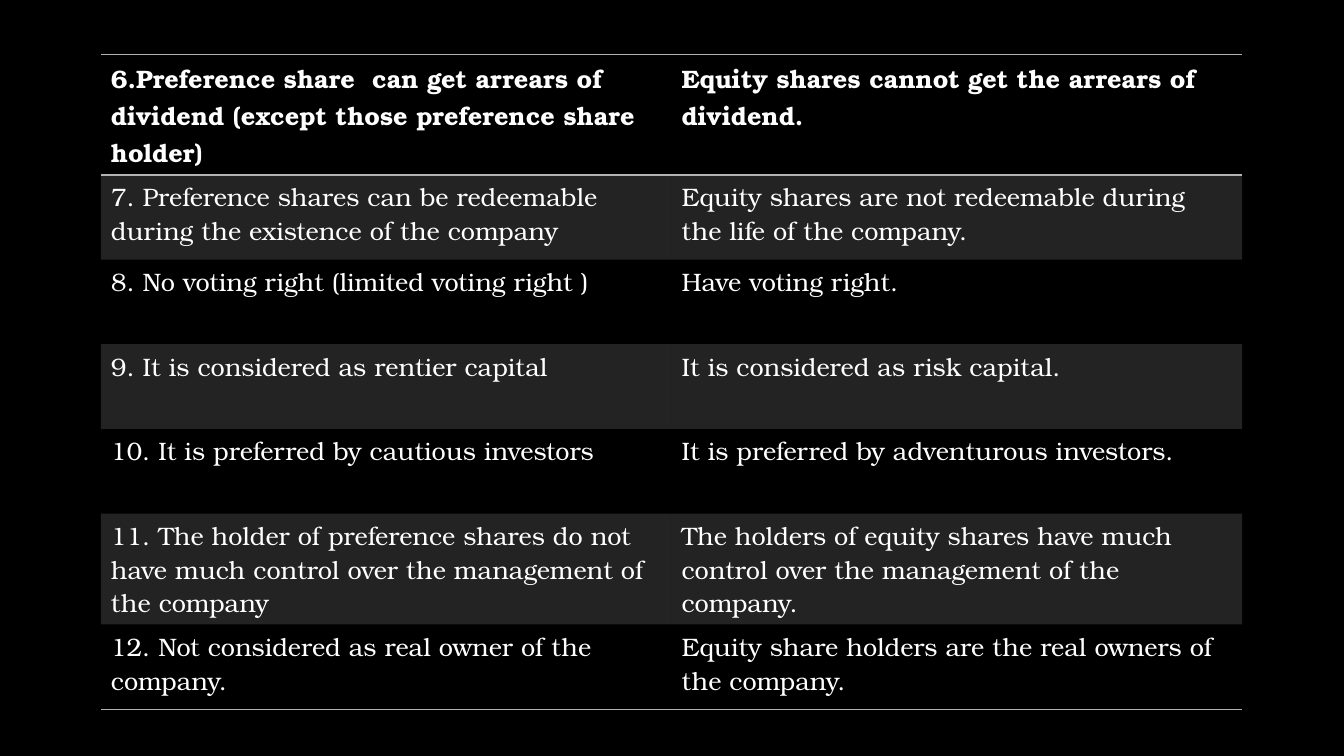
from lxml.etree import SubElement
from pptx import Presentation
from pptx.dml.color import RGBColor
from pptx.oxml.ns import qn
from pptx.util import Inches, Pt

COLORS = {"background": "000000", "text": "FFFFFF", "accent": "B2B2B2"}

COMPARISON = [
    ("6.Preference share  can get arrears of dividend (except those preference share holder)",
     "Equity shares cannot get the arrears of dividend."),
    ("7. Preference shares can be redeemable during the existence of the company",
     "Equity shares are not redeemable during the life of the company."),
    ("8. No voting right (limited voting right )", "Have voting right."),
    ("9. It is considered as rentier capital", "It is considered as risk capital."),
    ("10. It is preferred by cautious investors", "It is preferred by adventurous investors."),
    ("11. The holder of preference shares do not have much control over the management of the company",
     "The holders of equity shares have much control over the management of the company."),
    ("12. Not considered as real owner of the company.",
     "Equity share holders are the real owners of the company."),
]
ROW_HEIGHTS = [1.07, 0.84, 0.84, 0.84, 0.84, 1.07, 0.84]


def write(frame, text, *, font, size=18, bold=False, color="text"):
    run = frame.paragraphs[0].add_run()
    run.text = text
    run.font.name = font
    run.font.size = Pt(size)
    run.font.bold = bold
    run.font.color.rgb = RGBColor.from_string(COLORS[color])


class ComparisonSlide:
    """Holds the style and the current slide, and draws its elements."""

    def __init__(self, deck, font):
        self.font = font
        self.slide = deck.slides.add_slide(deck.slide_layouts[6])
        backdrop = self.slide.background.fill
        backdrop.solid()
        backdrop.fore_color.rgb = RGBColor.from_string(COLORS["background"])

    def shade(self, cell, opacity):
        cell.fill.solid()
        cell.fill.fore_color.rgb = RGBColor.from_string(COLORS["accent"])
        tint = next(cell._tc.tcPr.iter(qn("a:srgbClr")))
        SubElement(tint, qn("a:alpha"), val=str(opacity * 1000))

    def rule(self, cell, ruled_sides):
        properties = cell._tc.get_or_add_tcPr()
        for position, side in enumerate("LRTB"):
            edge = SubElement(properties, qn(f"a:ln{side}"), w=str(Pt(1)))
            if side in ruled_sides:
                ink = SubElement(edge, qn("a:solidFill"))
                SubElement(ink, qn("a:srgbClr"), val=COLORS["accent"])
            else:
                SubElement(edge, qn("a:noFill"))
            properties.insert(position, edge)

    def table(self, rows, heights, left, top, width):
        columns = len(rows[0])
        grid = self.slide.shapes.add_table(
            len(rows), columns, Inches(left), Inches(top),
            Inches(width), Inches(sum(heights))).table
        grid.first_row = grid.horz_banding = False
        for column in grid.columns:
            column.width = Inches(width / columns)
        ruled = {0: "TB", len(rows) - 1: "B"}
        for r, (texts, height) in enumerate(zip(rows, heights)):
            grid.rows[r].height = Inches(height)
            for c, text in enumerate(texts):
                cell = grid.cell(r, c)
                write(cell.text_frame, text, font=self.font, bold=r == 0)
                if r % 2:
                    self.shade(cell, opacity=20)
                else:
                    cell.fill.background()
                sides = "T" if r == 1 else ruled.get(r, "")
                self.rule(cell, sides)


def main():
    deck = Presentation()
    deck.slide_width, deck.slide_height = Inches(13.33), Inches(7.5)
    shares = ComparisonSlide(deck, font="TeX Gyre Bonum")
    shares.table(COMPARISON, ROW_HEIGHTS, left=1, top=0.54, width=11.32)
    deck.save("out.pptx")


if __name__ == "__main__":
    main()
